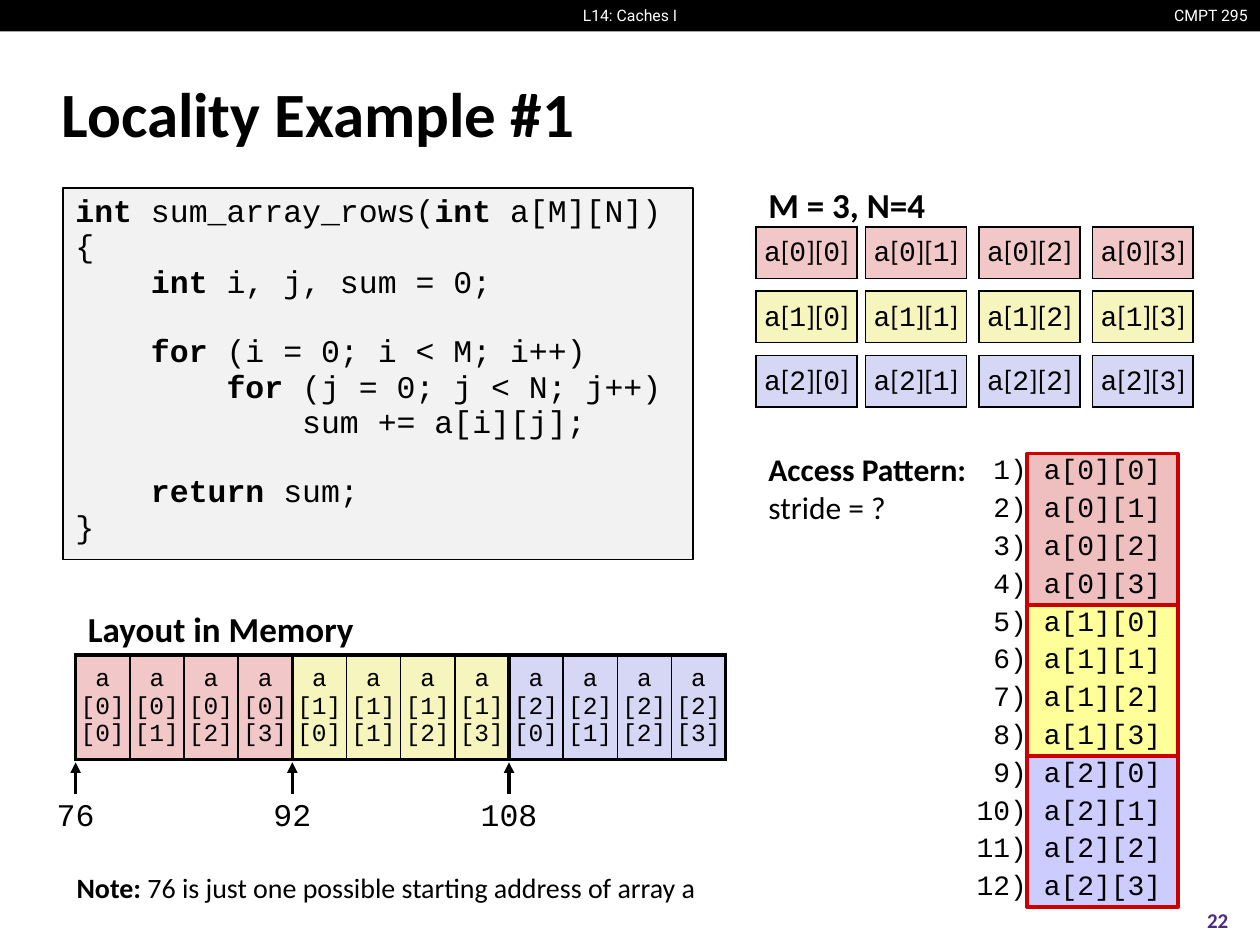
from lxml import etree
from pptx import Presentation
from pptx.dml.color import RGBColor
from pptx.enum.shapes import MSO_CONNECTOR, MSO_SHAPE
from pptx.enum.text import MSO_ANCHOR, PP_ALIGN
from pptx.oxml.ns import qn
from pptx.util import Inches, Pt

RECT = MSO_SHAPE.RECTANGLE
STRAIGHT = MSO_CONNECTOR.STRAIGHT
TOP, MIDDLE = MSO_ANCHOR.TOP, MSO_ANCHOR.MIDDLE
LEFT, CENTER, RIGHT = PP_ALIGN.LEFT, PP_ALIGN.CENTER, PP_ALIGN.RIGHT

BLACK = RGBColor(0x00, 0x00, 0x00)
WHITE = RGBColor(0xFF, 0xFF, 0xFF)
GRAY = RGBColor(0xF2, 0xF2, 0xF2)
RED = RGBColor(0xCC, 0x00, 0x00)
PURPLE = RGBColor(0x4B, 0x2A, 0x85)
ROW_FILLS = [RGBColor(0xF1, 0xC7, 0xC7), RGBColor(0xF6, 0xF5, 0xBD), RGBColor(0xD6, 0xD6, 0xF5)]
GROUP_FILLS = [RGBColor(0xEF, 0xBF, 0xBF), RGBColor(0xFF, 0xFF, 0x99), RGBColor(0xCC, 0xCC, 0xFF)]

SANS, MONO, HEADER = "Calibri", "Courier New", "Roboto"
COLS, ROWS = 100, 75
UNIT = Inches(10) // COLS
M, N = 3, 4
NO_STYLE = "{2D5ABB26-0587-4C30-8999-92F81FD0307C}"

CODE = [
    (0, 0, [("int", True), (" sum_array_rows(", False), ("int ", True), ("a[M][N])", False)]),
    (0, 0, [("{", False)]),
    (4, 0, [("int", True), (" i, j, sum = 0;", False)]),
    (4, 1, [("for", True), (" (i = 0; i < M; i++)", False)]),
    (8, 0, [("for", True), (" (j = 0; j < N; j++)", False)]),
    (12, 0, [("sum += a[i][j];", False)]),
    (4, 1, [("return", True), (" sum;", False)]),
    (0, 0, [("}", False)]),
]


def grid(*lengths):
    """Turn grid columns or rows into slide lengths."""
    return [round(n * UNIT) for n in lengths]


def style(p, size, name=SANS, color=BLACK, align=LEFT):
    """Set the alignment and shared font of a paragraph."""
    p.alignment = align
    p.font.size, p.font.name = Pt(size), name
    p.font.color.rgb = color


def add_runs(p, runs):
    """Add runs given as (text, bold) pairs."""
    for text, bold in runs:
        r = p.add_run()
        r.text, r.font.bold = text, bold


def add_text(s, box, lines, size, name=SANS, color=BLACK, align=LEFT, anchor=TOP):
    """Add a text box with one paragraph for each list of runs."""
    tf = s.shapes.add_textbox(*grid(*box)).text_frame
    tf.word_wrap, tf.vertical_anchor = False, anchor
    for i, runs in enumerate(lines):
        p = tf.add_paragraph() if i else tf.paragraphs[0]
        style(p, size, name, color, align)
        add_runs(p, runs)


def add_rect(s, box, fill, line=None, weight=1):
    """Add a flat filled rectangle."""
    sp = s.shapes.add_shape(RECT, *grid(*box))
    sp.shadow.inherit = False
    sp.fill.solid()
    sp.fill.fore_color.rgb = fill
    if line is None:
        sp.line.fill.background()
    else:
        sp.line.color.rgb, sp.line.width = line, Pt(weight)
    return sp


def add_plain_table(s, box, widths, heights):
    """Add an unstyled table with zero margins and no fills."""
    frame = s.shapes.add_table(len(heights), len(widths), *grid(*box))
    for el in frame.element.iter(qn("a:tableStyleId")):
        el.text = NO_STYLE
    table = frame.table
    table.first_row = table.horz_banding = False
    for col, width in zip(table.columns, grid(*widths)):
        col.width = width
    for row, height in zip(table.rows, grid(*heights)):
        row.height = height
    for cell in table.iter_cells():
        cell.margin_left = cell.margin_right = cell.margin_top = cell.margin_bottom = 0
        cell.vertical_anchor = MIDDLE
        cell.fill.background()
        cell.text_frame.paragraphs[0].font.size = Pt(1)
    return table


def set_borders(cell, left=1, right=1, top=1, bottom=1):
    """Draw the four black borders of a cell at the given point widths."""
    tcPr = cell._tc.get_or_add_tcPr()
    for i, (side, weight) in enumerate(zip("LRTB", (left, right, top, bottom))):
        ln = etree.Element(qn(f"a:ln{side}"), w=str(Pt(weight)))
        fill = etree.SubElement(ln, qn("a:solidFill"))
        etree.SubElement(fill, qn("a:srgbClr"), val=str(BLACK))
        tcPr.insert(i, ln)


def fill_cell(cell, runs, size, fill=None, align=CENTER):
    """Write (text, font name) runs into a cell and fill it."""
    p = cell.text_frame.paragraphs[0]
    style(p, size, MONO, align=align)
    for text, name in runs:
        r = p.add_run()
        r.text, r.font.name = text, name
    if fill is not None:
        cell.fill.solid()
        cell.fill.fore_color.rgb = fill


def add_header(s, box):
    """Draw the black band with the lecture and course names."""
    x, y, w, h = box
    add_rect(s, box, BLACK)
    add_text(s, (x + w - 8.1, y, 8.1, h), [[("CMPT 295", False)]], 9, HEADER, WHITE, RIGHT)
    add_text(s, (x + w / 2 - 4.9, y, 9.8, h), [[("L14: Caches I", False)]], 9, HEADER, WHITE, CENTER)


def add_code(s, box):
    """Draw the code panel, indenting by character widths."""
    tf = add_rect(s, box, GRAY, BLACK).text_frame
    tf.word_wrap, tf.vertical_anchor = True, TOP
    for i, (indent, gap, runs) in enumerate(CODE):
        p = tf.add_paragraph() if i else tf.paragraphs[0]
        style(p, 18, MONO)
        p.line_spacing = 0.94
        p.space_before = Pt(19.2 * gap)
        add_runs(p, runs)
        p._p.get_or_add_pPr().set("marL", str(Pt(10.8 * indent)))


def add_matrix(s, box):
    """Draw the array as rows of separated cells under its heading."""
    x, y, w, h = box
    add_text(s, (x, y - 3.9, 14.6, 4.4), [[("M = 3, N=4", True)]], 20)
    table = add_plain_table(s, box, [8, 0.7, 8, 1, 8, 1, 8], [4.1, 1, 4.1, 1, 4.1])
    for i in range(M):
        for j in range(N):
            cell = table.cell(2 * i, 2 * j)
            runs = [("a", MONO), ("[", SANS), (str(i), MONO), ("][", SANS), (str(j), MONO), ("]", SANS)]
            fill_cell(cell, runs, 16, ROW_FILLS[i])
            set_borders(cell)


def add_memory(s, box):
    """Draw the array laid out in memory with its row addresses."""
    x, y, w, h = box
    add_text(s, (x, y - 4.3, 23.3, 4.4), [[("Layout in Memory", True)]], 20)
    table = add_plain_table(s, box, [w / (M * N)] * (M * N), [h])
    for k in range(M * N):
        i, j = divmod(k, N)
        cell = table.cell(0, k)
        fill_cell(cell, [(f"a [{i}] [{j}]", MONO)], 14, ROW_FILLS[i])
        set_borders(cell, 2.25 if j == 0 else 1, 2.25 if j == N - 1 else 1, 2.25, 2.25)
    for i in range(M):
        left = x + i * w / M
        ends = grid(left, y + h + 2.7, left, y + h + 0.2)
        line = s.shapes.add_connector(STRAIGHT, *ends)
        line.line.color.rgb, line.line.width = BLACK, Pt(2)
        etree.SubElement(line.line._get_or_add_ln(), qn("a:tailEnd"), type="triangle")
        etree.SubElement(line.element.spPr, qn("a:effectLst"))
        add_text(s, (left - 3.25, y + h + 2.3, 6.5, 4), [[(str(76 + 16 * i), False)]], 18, MONO, align=CENTER)


def add_accesses(s, box):
    """Draw the numbered accesses over one coloured block per array row."""
    x, y, w, h = box
    number_w, step = 5, h / (M * N)
    for i, fill in enumerate(GROUP_FILLS):
        add_rect(s, (x + number_w, y + i * h / M, w - number_w, h / M), fill, RED, 2)
    add_text(s, (x - 16.5, y - 0.8, 17.9, 7.1), [[("Access Pattern:", True)], [("stride = ?", False)]], 18)
    table = add_plain_table(s, box, [number_w, w - number_w], [step] * (M * N))
    for k in range(M * N):
        i, j = divmod(k, N)
        fill_cell(table.cell(k, 0), [(f"{k + 1})", MONO)], 16, align=RIGHT)
        fill_cell(table.cell(k, 1), [(f"a[{i}][{j}]", MONO)], 16)


def main():
    """Build and save the slide."""
    prs = Presentation()
    prs.slide_width, prs.slide_height = COLS * UNIT, ROWS * UNIT
    s = prs.slides.add_slide(prs.slide_layouts[6])
    add_header(s, (0, 0, COLS, 2.5))
    add_text(s, (3.9, 4.8, 91.5, 8.3), [[("Locality Example #1", True)]], 36, anchor=MIDDLE)
    add_code(s, (5, 14.9, 50, 29.5))
    add_matrix(s, (60, 18, 34.7, 14.3))
    add_memory(s, (6, 52, 51.6, 8.3))
    add_accesses(s, (76.5, 36, 17, 36))
    note = [("Note:", True), (" 76 is just one possible starting address of array a", False)]
    add_text(s, (5.1, 68.6, 52.2, 3.7), [note], 16)
    add_text(s, (93.3, 71, 6.7, 4), [[("22", True)]], 12, color=PURPLE, align=CENTER, anchor=MIDDLE)
    prs.save("out.pptx")


if __name__ == "__main__":
    main()
